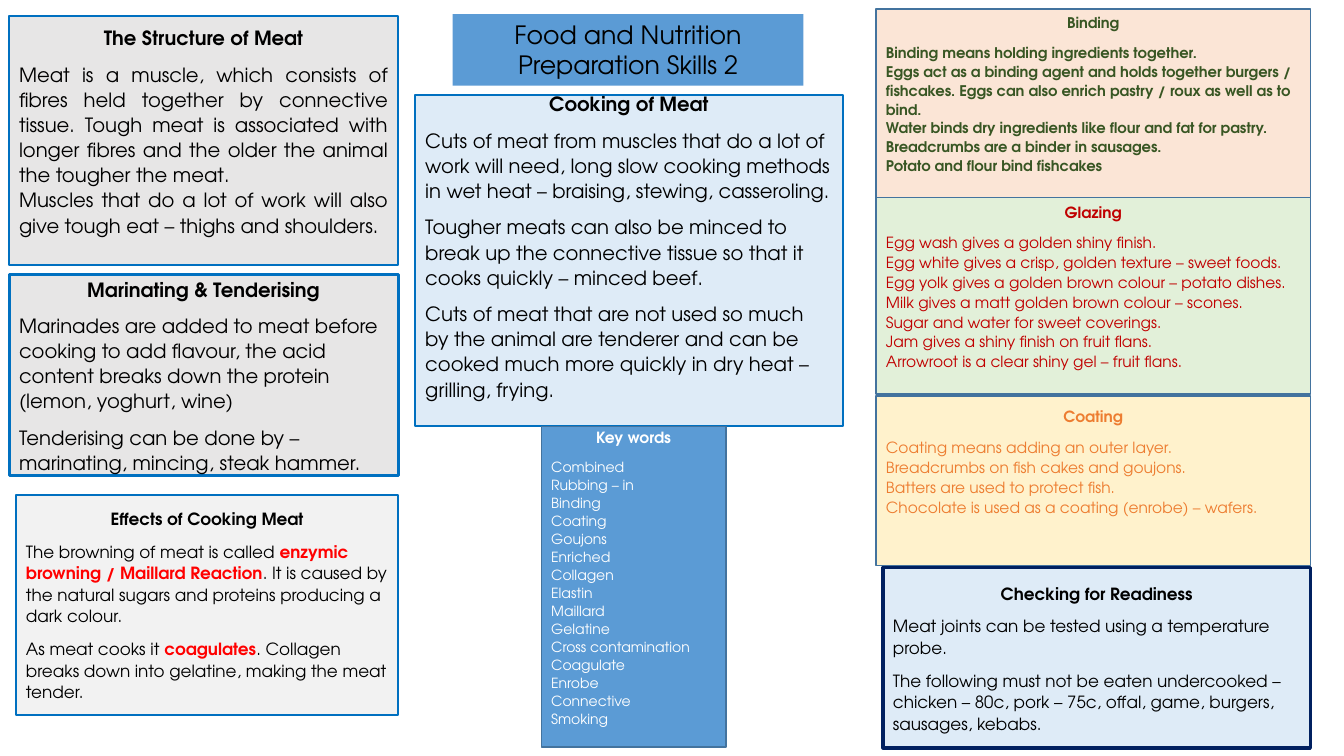
from dataclasses import dataclass
from typing import NamedTuple

from pptx import Presentation
from pptx import util as u
from pptx.dml.color import RGBColor
from pptx.enum import shapes, text

FONT = "TeX Gyre Adventor"
BLACK = RGBColor(0x00, 0x00, 0x00)
WHITE = RGBColor(0xFF, 0xFF, 0xFF)
RED = RGBColor(0xFF, 0x00, 0x00)
CRIMSON = RGBColor(0xC0, 0x00, 0x00)
ORANGE = RGBColor(0xED, 0x7D, 0x31)
FOREST = RGBColor(0x38, 0x56, 0x23)
BLUE = RGBColor(0x00, 0x70, 0xC0)
NAVY = RGBColor(0x00, 0x20, 0x60)
STEEL = RGBColor(0x43, 0x73, 0x9E)
SKY = RGBColor(0x5B, 0x9B, 0xD5)
PALE_BLUE = RGBColor(0xDE, 0xEB, 0xF7)
GREY = RGBColor(0xE7, 0xE6, 0xE6)
PALE_GREY = RGBColor(0xF2, 0xF2, 0xF2)
PEACH = RGBColor(0xFB, 0xE5, 0xD6)
CREAM = RGBColor(0xFF, 0xF2, 0xCC)
MINT = RGBColor(0xE2, 0xF0, 0xD9)

SLIDE_W, SLIDE_H = u.Inches(13.333), u.Inches(7.5)
LEFT, CENTER, JUSTIFY = (text.PP_ALIGN.LEFT, text.PP_ALIGN.CENTER,
                         text.PP_ALIGN.JUSTIFY)


class Column(NamedTuple):
    """Left edge and width in percent of the slide's width."""
    left: float
    width: float


MEAT = Column(0.68, 28.95)
EFFECTS = Column(1.2, 28.43)
TITLE = Column(33.68, 26.1)
COOKING = Column(30.9, 31.8)
KEY_WORDS = Column(40.28, 13.73)
SKILLS = Column(65.18, 32.33)
READINESS = Column(65.7, 31.8)


@dataclass
class Card:
    """Top and height are percent of the slide's height, the rest points.

    Body text between asterisks is emphasised; foot is room kept free below.
    """
    column: Column
    top: float
    height: float
    heading: str
    body: list[str]
    fill: RGBColor
    line: RGBColor = BLUE
    line_width: float = 1.5
    size: float = 14
    heading_size: float = 14
    ink: RGBColor = BLACK
    gap: float = 8
    align: text.PP_ALIGN = LEFT
    bold: bool = False
    foot: float = 0


CARDS = [
    Card(MEAT, 2.13, 32.93, "The Structure of Meat", [
        "Meat is a muscle, which consists of fibres held together by "
        "connective tissue. Tough meat is associated with longer fibres and "
        "the older the animal the tougher the meat.",
        "Muscles that do a lot of work will also give tough eat – thighs and "
        "shoulders.",
    ], GREY, gap=0, align=JUSTIFY, foot=14),
    Card(COOKING, 12.53, 43.87, "Cooking of Meat", [
        "Cuts of meat from muscles that do a lot of work will need, long slow "
        "cooking methods in wet heat – braising, stewing, casseroling.",
        "Tougher meats can also be minced to break up the connective tissue "
        "so that it cooks quickly – minced beef.",
        "Cuts of meat that are not used so much by the animal are tenderer "
        "and can be cooked much more quickly in dry heat – grilling, frying.",
    ], PALE_BLUE, foot=21),
    Card(MEAT, 36.27, 26.67, "Marinating & Tenderising", [
        "Marinades are added to meat before cooking to add flavour, the acid "
        "content breaks down the protein (lemon, yoghurt, wine)",
        "Tenderising can be done by – marinating, mincing, steak hammer.",
    ], GREY, line_width=2.25),
    Card(EFFECTS, 65.47, 29.07, "Effects of Cooking Meat", [
        "The browning of meat is called *enzymic browning / Maillard "
        "Reaction*. It is caused by the natural sugars and proteins producing "
        "a dark colour.",
        "As meat cooks it* coagulates*. Collagen breaks down into gelatine, "
        "making the meat tender.",
    ], PALE_GREY, size=12, heading_size=12),
    Card(READINESS, 75.07, 23.87, "Checking for Readiness", [
        "Meat joints can be tested using a temperature probe.",
        "The following must not be eaten undercooked – chicken – 80c, pork – "
        "75c, offal, game, burgers, sausages, kebabs.",
    ], PALE_BLUE, NAVY, 2.25, size=12, heading_size=12),
    Card(SKILLS, 1.2, 24.93, "Binding", [
        "Binding means holding ingredients together.",
        "Eggs act as a binding agent and holds together burgers / fishcakes. "
        "Eggs can also enrich pastry / roux as well as to bind.",
        "Water binds dry ingredients like flour and fat for pastry.",
        "Breadcrumbs are a binder in sausages.",
        "Potato and flour bind fishcakes",
    ], PEACH, STEEL, 1, 10.5, 10.5, FOREST, gap=0, bold=True, foot=14),
    Card(SKILLS, 52.4, 22.4, "Coating", [
        "Coating means adding an outer layer.",
        "Breadcrumbs on fish cakes and goujons.",
        "Batters are used to protect fish.",
        "Chocolate is used as a coating (enrobe) – wafers.",
    ], CREAM, STEEL, 1, 11, 11, ORANGE, gap=0, foot=28),
    Card(SKILLS, 26.13, 26, "Glazing", [
        "Egg wash gives a golden shiny finish.",
        "Egg white gives a crisp, golden texture – sweet foods.",
        "Egg yolk gives a golden brown colour – potato dishes.",
        "Milk gives a matt golden brown colour – scones.",
        "Sugar and water for sweet coverings.",
        "Jam gives a shiny finish on fruit flans.",
        "Arrowroot is a clear shiny gel – fruit flans.",
    ], MINT, STEEL, 1, 11, 11, CRIMSON, gap=0, foot=14),
    Card(KEY_WORDS, 56.4, 42.4, "Key words", [
        "Combined", "Rubbing – in", "Binding", "Coating", "Goujons",
        "Enriched", "Collagen", "Elastin", "Maillard", "Gelatine",
        "Cross contamination", "Coagulate", "Enrobe", "Connective", "Smoking",
    ], SKY, STEEL, 1, 10, 11, WHITE, gap=0, foot=14),
]


def box(column: Column, top: float, height: float) -> tuple[int, int, int, int]:
    """Turn percent of the slide into left, top, width and height."""
    return (int(SLIDE_W * column.left / 100), int(SLIDE_H * top / 100),
            int(SLIDE_W * column.width / 100), int(SLIDE_H * height / 100))


def write(p, words: str, size: float, ink: RGBColor, bold: bool,
          align: text.PP_ALIGN, after: float, spacing: float = 1.07) -> None:
    p.alignment = align
    p.line_spacing = spacing
    p.space_before, p.space_after = u.Pt(0), u.Pt(after)
    p.font.name, p.font.size, p.font.bold = FONT, u.Pt(size), bold
    p.font.color.rgb = ink
    for i, part in enumerate(words.split("*")):
        r = p.add_run()
        r.text = part
        if i % 2:
            r.font.bold = True
            r.font.color.rgb = RED


def add_title(s, lines: list[str]) -> None:
    sp = s.shapes.title
    sp.left, sp.top, sp.width, sp.height = box(TITLE, 1.87, 9.47)
    sp.fill.solid()
    sp.fill.fore_color.rgb = SKY
    tf = sp.text_frame
    tf.auto_size = text.MSO_AUTO_SIZE.NONE
    tf.vertical_anchor = text.MSO_ANCHOR.TOP
    for i, line in enumerate(lines):
        p = tf.add_paragraph() if i else tf.paragraphs[0]
        write(p, line, 18, BLACK, False, CENTER, 0, 1.0)


def add_card(s, card: Card) -> None:
    sp = s.shapes.add_shape(shapes.MSO_SHAPE.RECTANGLE,
                            *box(card.column, card.top, card.height))
    sp.shadow.inherit = False
    sp.fill.solid()
    sp.fill.fore_color.rgb = card.fill
    sp.line.color.rgb = card.line
    sp.line.width = u.Pt(card.line_width)
    tf = sp.text_frame
    tf.word_wrap = True
    tf.vertical_anchor = text.MSO_ANCHOR.MIDDLE
    tf.margin_bottom = u.Pt(3.6 + card.foot)
    write(tf.paragraphs[0], card.heading, card.heading_size, card.ink, True,
          CENTER, 8)
    for words in card.body:
        write(tf.add_paragraph(), words, card.size, card.ink, card.bold,
              card.align, card.gap)


def main() -> None:
    prs = Presentation()
    prs.slide_width, prs.slide_height = SLIDE_W, SLIDE_H
    s = prs.slides.add_slide(prs.slide_layouts[5])
    add_title(s, ["Food and Nutrition", "Preparation Skills 2"])
    for card in CARDS:
        add_card(s, card)
    prs.save("out.pptx")


if __name__ == "__main__":
    main()
